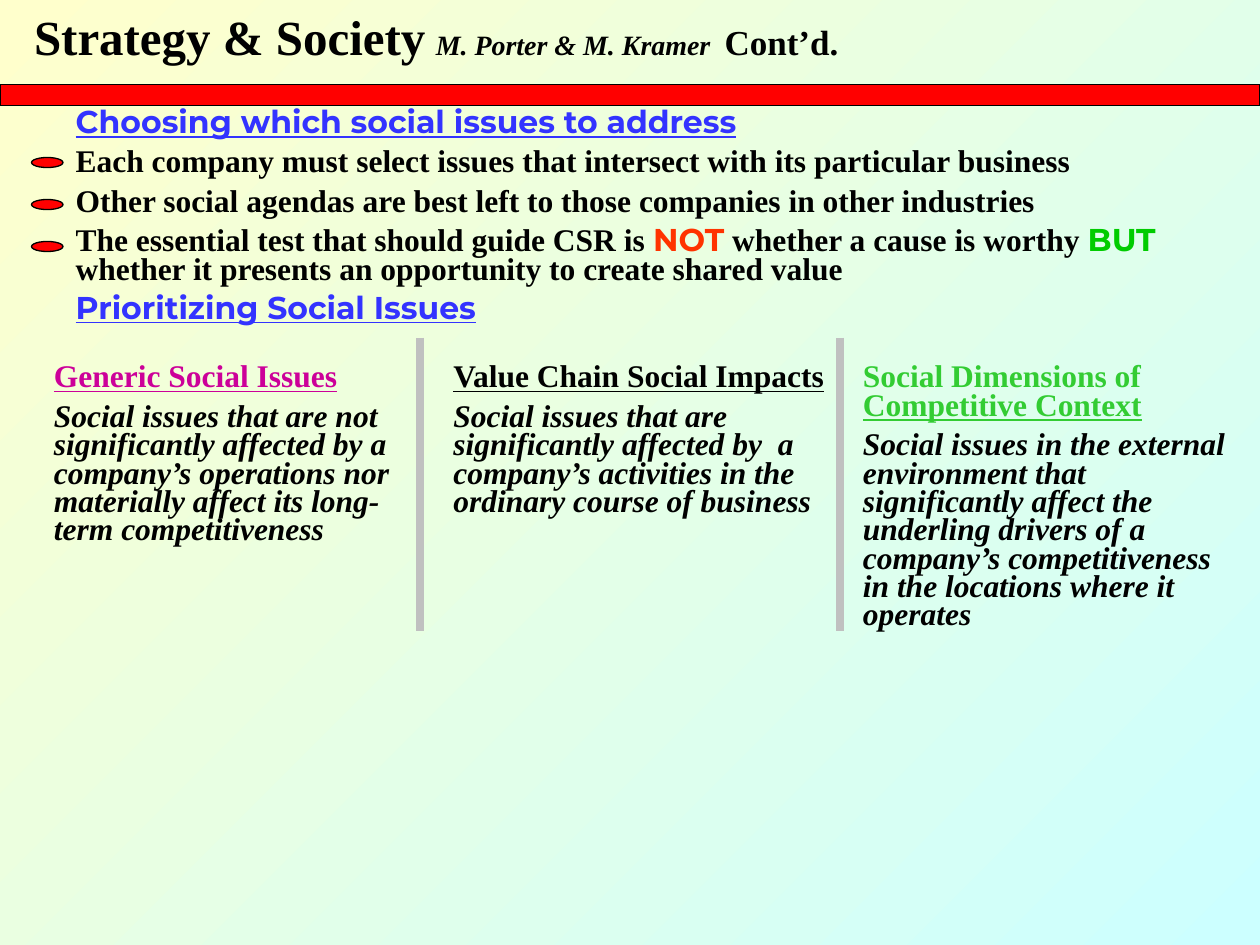
from lxml.etree import SubElement
from pptx import Presentation
from pptx.dml.color import RGBColor
from pptx.enum.shapes import MSO_CONNECTOR, MSO_SHAPE
from pptx.enum.text import MSO_ANCHOR, MSO_AUTO_SIZE, PP_ALIGN
from pptx.oxml.ns import qn
from pptx.util import Inches, Pt

COLORS = {
    "black": "000000", "red": "FF0000", "blue": "3333FF", "orange": "FF3300",
    "green": "00CC00", "magenta": "CC0099", "lime": "33CC33", "gray": "C0C0C0",
    "cream": "FFFFCC", "aqua": "CCFFFF",
}
SERIF, SANS = "Times New Roman", "Montserrat"
HEADING = {"font": SANS, "color": "blue", "underline": True}

COLUMNS = [
    (0.33, 3.08, [("Generic Social Issues", {"color": "magenta", "underline": True})],
     "Social issues that are not significantly affected by a company’s operations "
     "nor materially affect its long-term competitiveness"),
    (3.5, 3.17, [("Value Chain Social Impacts", {"underline": True})],
     "Social issues that are significantly affected by  a company’s activities "
     "in the ordinary course of business"),
    (6.75, 3.08, [("Social Dimensions of ", {"color": "lime"}),
                  ("Competitive Context", {"color": "lime", "underline": True})],
     "Social issues in the external environment that significantly affect the "
     "underling drivers of a company’s competitiveness in the locations where it operates"),
]


def rgb(name):
    return RGBColor.from_string(COLORS[name])


def add_run(p, text, size=18, font=SERIF, color="black", bold=True,
            italic=False, underline=False):
    r = p.add_run()
    r.text = text
    f = r.font
    f.size, f.name, f.bold, f.italic, f.underline = Pt(size), font, bold, italic, underline
    f.color.rgb = rgb(color)


def place(shape, left, top, width, height):
    shape.left, shape.top = Inches(left), Inches(top)
    shape.width, shape.height = Inches(width), Inches(height)


def prepare_frame(tf):
    tf.word_wrap = True
    tf.auto_size = MSO_AUTO_SIZE.NONE
    tf.vertical_anchor = MSO_ANCHOR.TOP


def fill_paragraphs(tf, paragraphs):
    """Write tight, unbulleted paragraphs, each a list of (text, format) runs."""
    prepare_frame(tf)
    for i, runs in enumerate(paragraphs):
        p = tf.add_paragraph() if i else tf.paragraphs[0]
        p.line_spacing = 0.75
        p.space_before = Pt(6.3)
        pPr = p._p.get_or_add_pPr()
        pPr.set("marL", "0")
        pPr.set("indent", "0")
        SubElement(pPr, qn("a:buNone"))
        for text, style in runs:
            add_run(p, text, **style)


def add_red_shape(s, kind, left, top, width, height):
    sp = s.shapes.add_shape(kind, Inches(left), Inches(top), Inches(width), Inches(height))
    sp.shadow.inherit = False
    sp.fill.solid()
    sp.fill.fore_color.rgb = rgb("red")
    sp.line.color.rgb = rgb("black")
    sp.line.width = Pt(0.75)


def set_background(s):
    fill = s.background.fill
    fill.gradient()
    fill.gradient_angle = 315  # counter-clockwise: top left to bottom right
    for stop, name in zip(fill.gradient_stops, ("cream", "aqua")):
        stop.color.rgb = rgb(name)


def build_title(s, left, top, width, height):
    title = s.shapes.title
    place(title, left, top, width, height)
    prepare_frame(title.text_frame)
    p = title.text_frame.paragraphs[0]
    p.alignment = PP_ALIGN.LEFT
    add_run(p, "Strategy & Society", size=28)
    add_run(p, " ", size=24, bold=False)
    add_run(p, "M. Porter & M. Kramer  ", size=16, italic=True)
    add_run(p, "Cont’d.", size=20)


def build_issues(s, left, top, width, height):
    body = s.placeholders[1]
    place(body, left, top, width, height)
    fill_paragraphs(body.text_frame, [
        [("Choosing which social issues to address", HEADING)],
        [("Each company must select issues that intersect with its particular business", {})],
        [("Other social agendas are best left to those companies in other industries", {})],
        [("The essential test that should guide CSR is ", {}),
         ("NOT", {"font": SANS, "color": "orange"}),
         (" whether a cause is worthy ", {}),
         ("BUT ", {"font": SANS, "color": "green"}),
         ("whether it presents an opportunity to create shared value", {})],
        [("Prioritizing Social Issues", HEADING)],
    ])
    for i in range(3):
        add_red_shape(s, MSO_SHAPE.OVAL, left - 0.25, top + 0.42 + i / 3, 0.25, 0.08)


def build_column(s, left, top, width, height, heading, text):
    box = s.shapes.add_textbox(Inches(left), Inches(top), Inches(width), Inches(height))
    fill_paragraphs(box.text_frame, [heading, [(text, {"italic": True})]])


def add_divider(s, x, top, height):
    line = s.shapes.add_connector(MSO_CONNECTOR.STRAIGHT, Inches(x), Inches(top),
                                  Inches(x), Inches(top + height))
    line.line.color.rgb = rgb("gray")
    line.line.width = Pt(4.5)
    SubElement(line._element.spPr, qn("a:effectLst"))


def main():
    prs = Presentation()
    prs.slide_width, prs.slide_height = Inches(10), Inches(7.5)
    s = prs.slides.add_slide(prs.slide_layouts[1])
    set_background(s)
    build_issues(s, 0.5, 0.83, 9.25, 1.88)
    add_red_shape(s, MSO_SHAPE.RECTANGLE, 0, 0.67, 10, 0.17)
    build_title(s, 0.17, 0, 9.67, 0.57)
    for left, width, heading, text in COLUMNS:
        build_column(s, left, 2.85, width, 2.24, heading, text)
    for i in (1, 2):
        add_divider(s, i * 10 / 3, 2.68, 2.33)
    prs.save("out.pptx")


if __name__ == "__main__":
    main()
